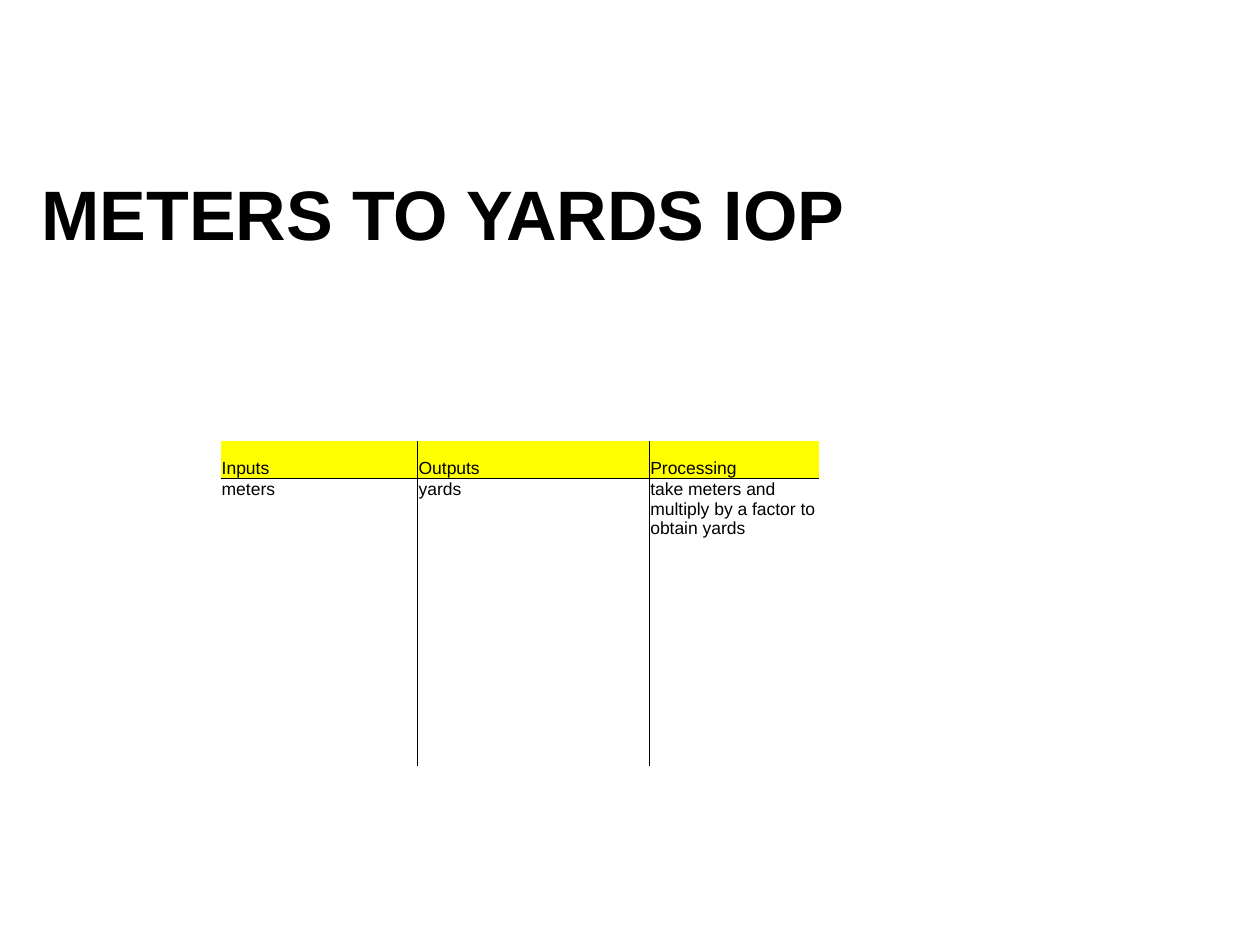
from lxml import etree
from pptx import Presentation
from pptx import util as u
from pptx.dml.color import RGBColor
from pptx.enum import text
from pptx.oxml.ns import qn

BLACK = RGBColor(0x00, 0x00, 0x00)
YELLOW = RGBColor(0xFF, 0xFF, 0x00)

HEADINGS = ["Inputs", "Outputs", "Processing"]
ENTRIES = ["meters", "yards", "take meters and multiply by a factor to obtain yards"]
EMPTY_ROWS = 3
COLUMN_WIDTHS = [3.97, 4.67, 3.42]
ROW_HEIGHTS = [0.76, 3.66] + [0.71] * EMPTY_ROWS


class SlideBuilder:
    font_name = "Arial"
    title_size = u.Pt(40)
    table_size = u.Pt(10)
    border_width = u.Pt(1)

    def __init__(self, slide):
        self.slide = slide

    def style(self, paragraph, size, bold=False):
        font = paragraph.font
        font.name, font.size, font.bold = self.font_name, size, bold
        font.color.rgb = BLACK

    def title(self, words, left, top, width, height):
        frame = self.slide.shapes.add_textbox(left, top, width, height).text_frame
        frame.word_wrap = True
        frame.margin_left = frame.margin_right = u.Cm(0.2)
        frame.margin_top = u.Cm(0.26)
        frame.text = words
        self.style(frame.paragraphs[0], self.title_size, bold=True)

    def borders(self, cell, sides):
        properties = cell._tc.get_or_add_tcPr()
        for side in "LRTB":
            line = etree.SubElement(properties, qn(f"a:ln{side}"), w=str(self.border_width))
            if side in sides:
                fill = etree.SubElement(line, qn("a:solidFill"))
                etree.SubElement(fill, qn("a:srgbClr"), val=str(BLACK))
            else:
                etree.SubElement(line, qn("a:noFill"))

    def cell(self, cell, words, sides, heading):
        cell.margin_left = cell.margin_right = cell.margin_top = u.Cm(0.02)
        cell.margin_bottom = 0
        cell.vertical_anchor = text.MSO_ANCHOR.BOTTOM if heading else text.MSO_ANCHOR.TOP
        cell.text = words
        self.style(cell.text_frame.paragraphs[0], self.table_size)
        self.borders(cell, sides)
        if heading:
            cell.fill.solid()
            cell.fill.fore_color.rgb = YELLOW
        else:
            cell.fill.background()

    def table(self, rows, left, top, widths, heights):
        table = self.slide.shapes.add_table(
            len(rows), len(widths), left, top, u.Cm(sum(widths)), u.Cm(sum(heights))
        ).table
        table.first_row = table.horz_banding = False
        for column, width in zip(table.columns, widths):
            column.width = u.Cm(width)
        for row, height in zip(table.rows, heights):
            row.height = u.Cm(height)
        # Rules run between columns and below the heading row
        last = len(widths) - 1
        for i, row in enumerate(rows):
            for j, words in enumerate(row):
                sides = ("L" if j > 0 else "") + ("R" if j < last else "")
                sides += {0: "B", 1: "T"}.get(i, "")
                self.cell(table.cell(i, j), words, sides, heading=i == 0)


def main():
    presentation = Presentation()
    presentation.slide_width, presentation.slide_height = u.Cm(25.4), u.Cm(19.05)
    builder = SlideBuilder(presentation.slides.add_slide(presentation.slide_layouts[6]))

    # Title
    builder.title("METERS TO YARDS IOP", u.Cm(0.64), u.Cm(3.18), u.Cm(23.93), u.Cm(2.74))

    # Inputs, outputs and processing chart
    rows = [HEADINGS, ENTRIES] + [[""] * len(HEADINGS)] * EMPTY_ROWS
    builder.table(rows, u.Cm(4.45), u.Cm(8.89), COLUMN_WIDTHS, ROW_HEIGHTS)

    presentation.save("out.pptx")


if __name__ == "__main__":
    main()
